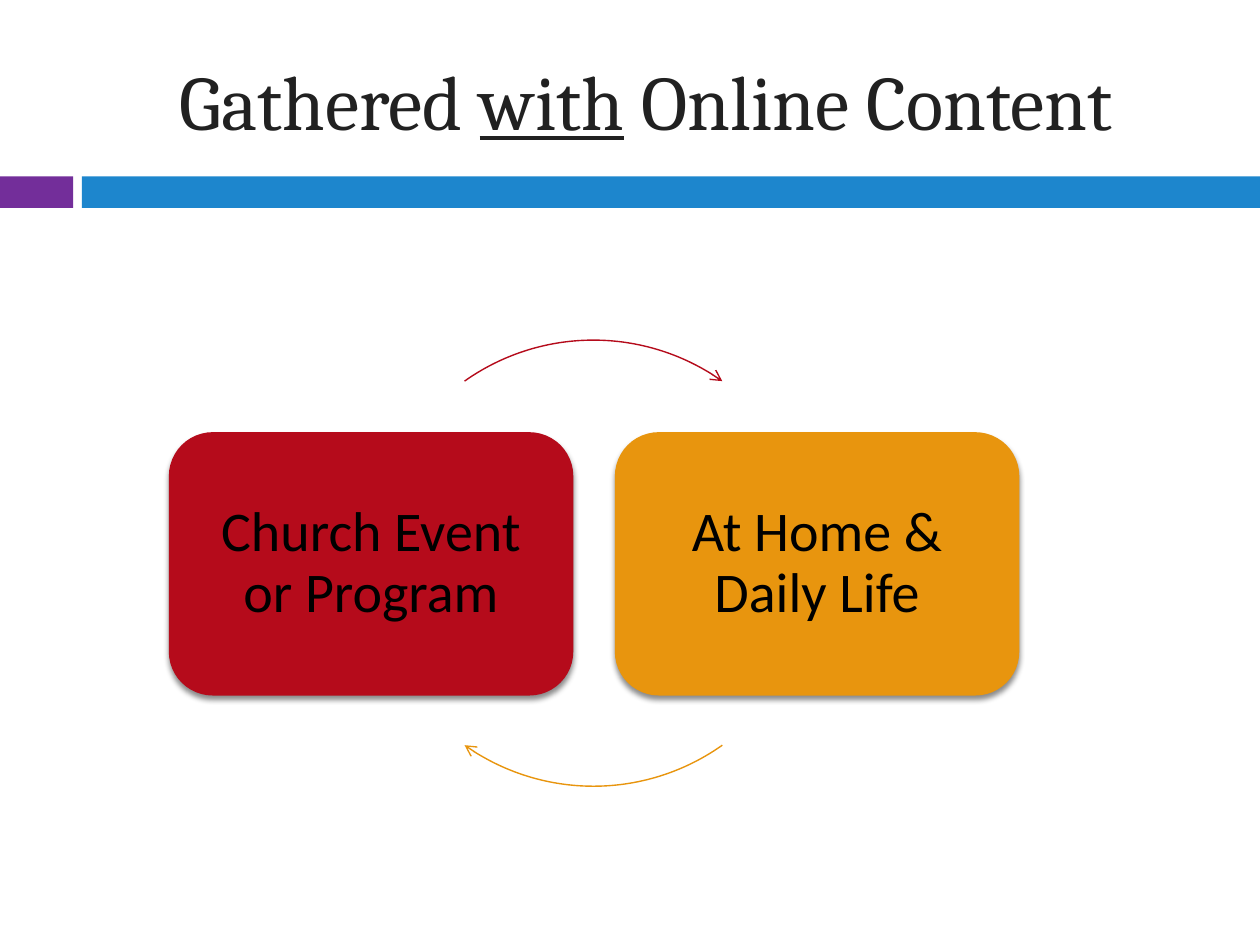
from lxml import etree
from pptx import Presentation
from pptx.dml.color import RGBColor
from pptx.enum import shapes, text
from pptx.oxml import parse_xml
from pptx.oxml.ns import nsdecls, qn
from pptx.util import Inches, Pt

RED, ORANGE = "B50B1B", "E8950E"
TITLE = [("Gathered ", False), ("with", True), (" Online Content", False)]
BANDS = [(0, 0.58, "732E9A"), (0.65, 9.35, "1D86CD")]  # left, width, colour
CARDS = [(1.34, "Church Event or Program", RED), (4.88, "At Home & Daily Life", ORANGE)]
ARCS = [(270, RED), (90, ORANGE)]  # middle angle in degrees, colour
HALF_SWEEP = 35.3

SHADOW = (f'<a:effectLst {nsdecls("a")}><a:outerShdw blurRad="{Pt(3)}" dist="{Pt(2.4)}" '
          'dir="5400000" rotWithShape="0"><a:srgbClr val="000000">'
          '<a:alpha val="45000"/></a:srgbClr></a:outerShdw></a:effectLst>')


def color(value):
    return RGBColor.from_string(value)


def add_shape(s, kind, box, fill=None):
    sp = s.shapes.add_shape(kind, *map(Inches, box))
    sp.shadow.inherit = False
    sp.line.fill.background()
    if fill:
        sp.fill.solid()
        sp.fill.fore_color.rgb = color(fill)
    else:
        sp.fill.background()
    return sp


def write(sp, runs, font, size, ink, inset):
    tf = sp.text_frame
    tf.word_wrap = True
    tf.vertical_anchor = text.MSO_ANCHOR.MIDDLE
    tf.margin_left = tf.margin_right = Inches(inset[0])
    tf.margin_top = tf.margin_bottom = Inches(inset[1])
    p = tf.paragraphs[0]
    p.alignment = text.PP_ALIGN.CENTER
    for words, underlined in runs:
        r = p.add_run()
        r.text = words
        r.font.name, r.font.size = font, Pt(size)
        r.font.color.rgb = color(ink)
        if underlined:
            r.font.underline = True
    return p


prs = Presentation()
prs.slide_width, prs.slide_height = Inches(10), Inches(7.5)
s = prs.slides.add_slide(prs.slide_layouts[6])

# Bands under the title
for left, width, fill in BANDS:
    add_shape(s, shapes.MSO_SHAPE.RECTANGLE, (left, 1.4, width, 0.25), fill)

# Cards
for left, words, fill in CARDS:
    card = add_shape(s, shapes.MSO_SHAPE.ROUNDED_RECTANGLE, (left, 3.43, 3.21, 2.09), fill)
    effects = card._element.spPr.find(qn("a:effectLst"))
    effects.getparent().replace(effects, parse_xml(SHADOW))
    p = write(card, [(words, False)], "Calibri", 32, "000000", (0.13, 0.13))
    p.line_spacing = 0.9

# Curved arrows, both on one circle
for middle, ink in ARCS:
    arc = add_shape(s, shapes.MSO_SHAPE.ARC, (2.94, 2.7, 3.54, 3.54))
    for i, angle in enumerate((middle - HALF_SWEEP, middle + HALF_SWEEP)):
        arc.adjustments[i] = angle * 0.6  # 60000ths of a degree over 100000
    arc.line.color.rgb = color(ink)
    arc.line.width = Pt(0.79)
    etree.SubElement(arc.line._get_or_add_ln(), qn("a:tailEnd"), type="arrow")

# Title
title = s.shapes.add_textbox(*map(Inches, (0.67, 0.25, 8.92, 1.08)))
write(title, TITLE, "Cambria", 44, "212121", (0.1, 0.05))

prs.save("out.pptx")
